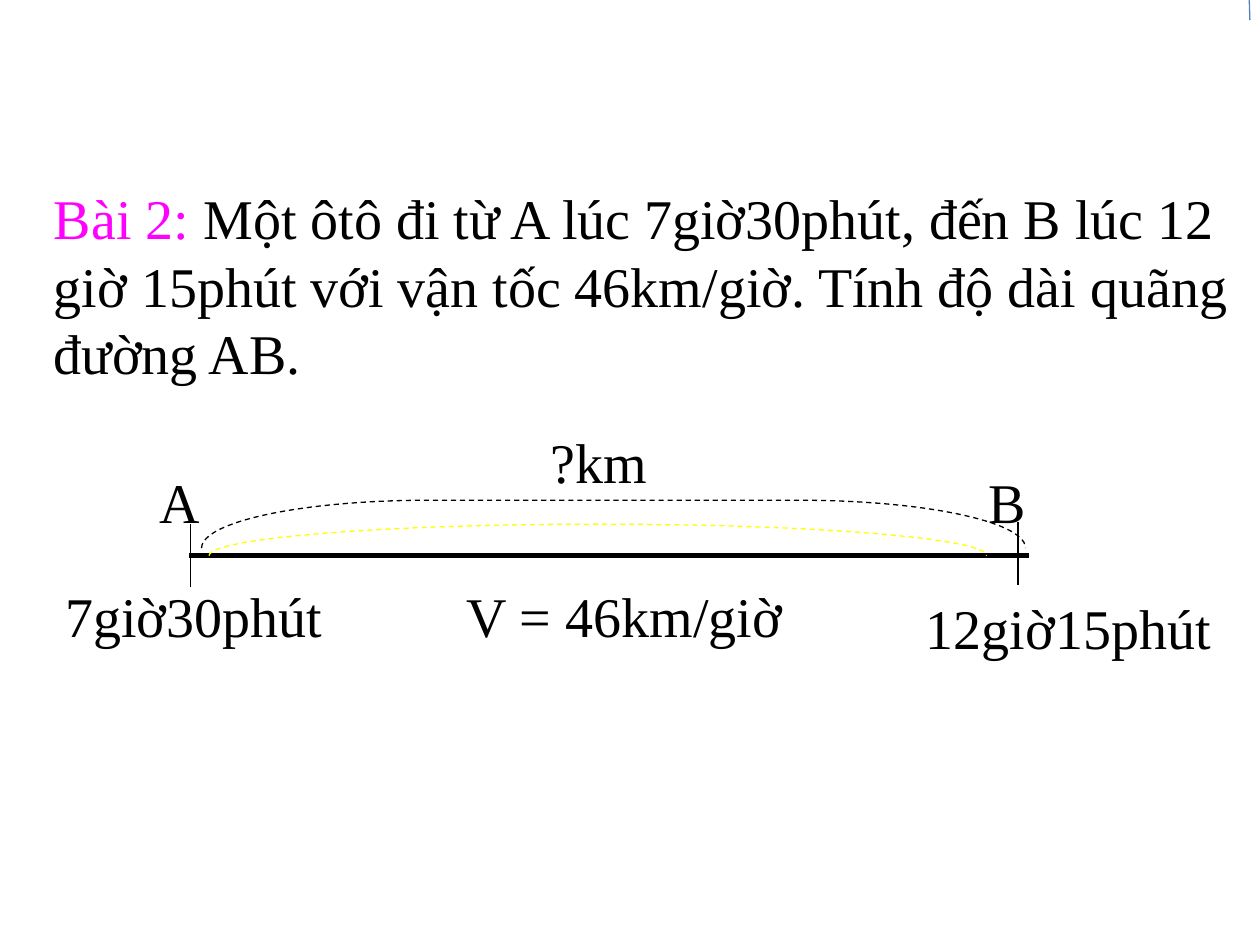
from lxml import etree
from pptx import Presentation
from pptx.dml.color import RGBColor
from pptx.enum.dml import MSO_LINE
from pptx.enum.shapes import MSO_CONNECTOR, MSO_SHAPE
from pptx.enum.text import MSO_AUTO_SIZE, PP_ALIGN
from pptx.oxml.ns import qn
from pptx.util import Inches, Pt

STRAIGHT = MSO_CONNECTOR.STRAIGHT
BRACKET = MSO_SHAPE.RIGHT_BRACKET
DASH = MSO_LINE.DASH
LEFT, CENTER = PP_ALIGN.LEFT, PP_ALIGN.CENTER
FONT = "Times New Roman"
BLACK, MAGENTA, YELLOW, BLUE = "000000", "FF00FF", "FFFF00", "4F81BD"

# start x, start y, end x, end y, colour, width in points
ROAD_LINES = [
    (1.5, 4.41, 8.17, 4.41, BLACK, 3),
    (1.51, 4.16, 1.51, 4.66, BLACK, 0.75),
    (8.08, 4.14, 8.08, 4.64, BLACK, 0.75),
]
CORNER_LINE = (9.91, -0.17, 9.92, 0.16, BLUE, 0.75)

# left, top, width, height before the quarter turn, corner rounding, colour
INNER_ARC = (4.62, 1.2, 0.25, 6.17, 12.33, YELLOW)
OUTER_ARC = (4.68, 0.89, 0.38, 6.54, 4.73, BLACK)

# text, left, top, width, alignment
LABELS = [
    ("A", 1.17, 3.66, 0.5, LEFT),
    ("B", 7.75, 3.66, 0.5, LEFT),
    ("7giờ30phút", 0.42, 4.57, 2.42, LEFT),
    ("12giờ15phút", 7.25, 4.66, 2.58, LEFT),
    ("V = 46km/giờ", 3.33, 4.57, 3.25, CENTER),
    ("?km", 3.46, 3.34, 2.58, CENTER),
]
PROBLEM = [
    ("Bài 2: ", MAGENTA),
    ("Một ôtô đi từ A lúc 7giờ30phút, đến B lúc 12 giờ 15phút "
     "với vận tốc 46km/giờ. Tính độ dài quãng đường AB.", BLACK),
]


def rgb(color):
    return RGBColor.from_string(color)


def add_text(slide, runs, left, top, width, height=0.63, align=LEFT, size=32):
    """Add a text box whose runs are (text, colour) pairs."""
    box = slide.shapes.add_textbox(*map(Inches, (left, top, width, height)))
    frame = box.text_frame
    frame.word_wrap = True
    frame.auto_size = MSO_AUTO_SIZE.SHAPE_TO_FIT_TEXT
    paragraph = frame.paragraphs[0]
    paragraph.alignment = align
    for text, color in runs:
        run = paragraph.add_run()
        run.text = text
        run.font.name = FONT
        run.font.size = Pt(size)
        run.font.color.rgb = rgb(color)


def add_line(slide, x1, y1, x2, y2, color, width):
    line = slide.shapes.add_connector(STRAIGHT, *map(Inches, (x1, y1, x2, y2)))
    line.line.color.rgb = rgb(color)
    line.line.width = Pt(width)
    etree.SubElement(line._element.spPr, qn("a:effectLst"))


def add_arc(slide, left, top, width, height, rounding, color):
    """Add a dashed bracket turned to span the road from above."""
    arc = slide.shapes.add_shape(BRACKET, *map(Inches, (left, top, width, height)))
    arc.adjustments[0] = rounding
    arc.rotation = 270
    arc.shadow.inherit = False
    arc.fill.background()
    arc.line.color.rgb = rgb(color)
    arc.line.width = Pt(0.75)
    arc.line.dash_style = DASH


def main():
    prs = Presentation()
    prs.slide_width, prs.slide_height = Inches(10), Inches(7.5)
    slide = prs.slides.add_slide(prs.slide_layouts[6])

    for road_line in ROAD_LINES:
        add_line(slide, *road_line)
    add_arc(slide, *INNER_ARC)
    for text, left, top, width, align in LABELS:
        add_text(slide, [(text, BLACK)], left, top, width, align=align)
    add_text(slide, PROBLEM, 0.33, 1.41, 9.58, height=1.72)
    add_line(slide, *CORNER_LINE)
    add_arc(slide, *OUTER_ARC)

    prs.save("out.pptx")


if __name__ == "__main__":
    main()
